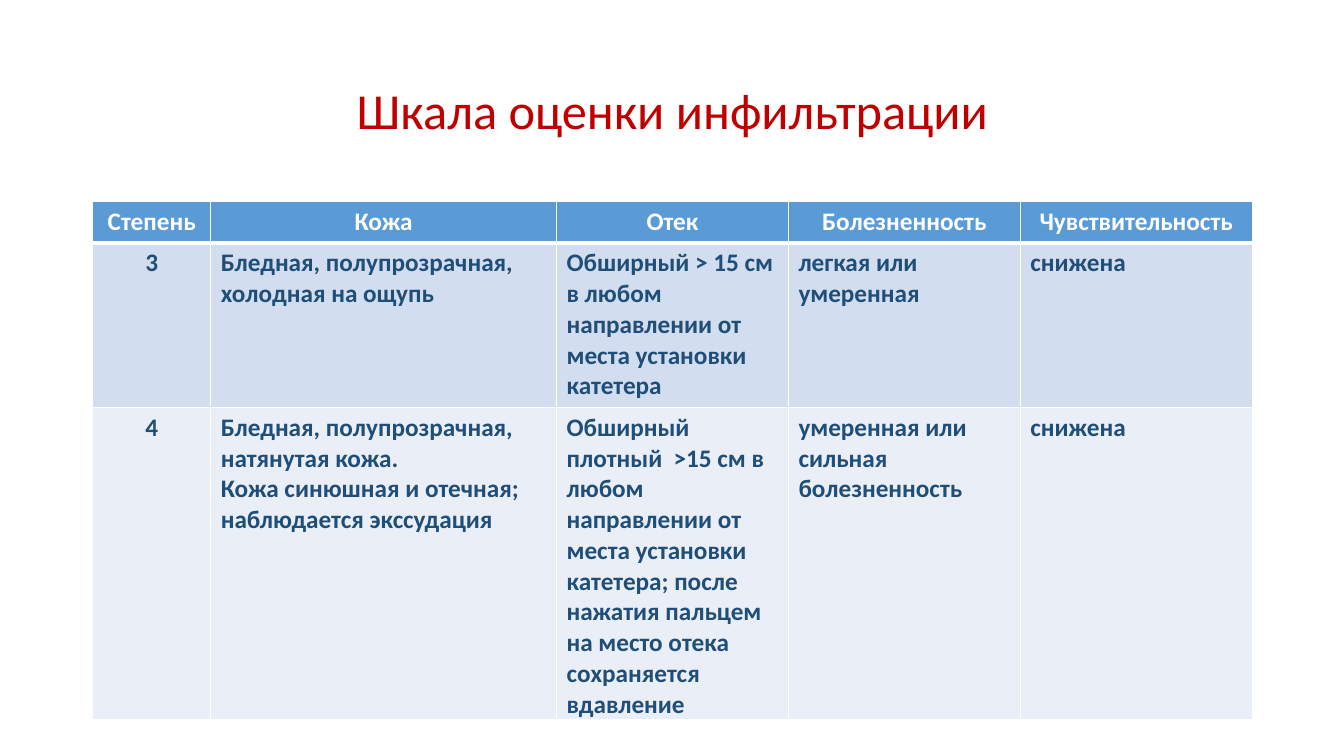
import pptx
import pptx.util
import pptx.dml.color
import pptx.enum.text
import pptx.oxml.ns
import lxml.etree

PX = 9144
COLORS = {"title": "C00000", "head": "5B9BD5", "dark": "D2DEEF",
          "light": "EAEFF7", "text": "1F4E79", "white": "FFFFFF"}
FILLS = ["head", "dark", "light"]
COLS = [117, 343, 230, 230, 230]
ROWS = [41, 163, 307]
CELLS = [
    ["Степень", "Кожа", "Отек", "Болезненность", "Чувствительность"],
    ["3",
     "Бледная, полупрозрачная, холодная на ощупь",
     "Обширный > 15 см в любом направлении от места установки катетера",
     "легкая или умеренная",
     "снижена"],
    ["4",
     "Бледная, полупрозрачная, натянутая кожа.\n"
     "Кожа синюшная и отечная; наблюдается экссудация",
     "Обширный плотный  >15 см в любом направлении от места установки\n"
     "катетера; после нажатия пальцем на место отека сохраняется вдавление",
     "умеренная или сильная болезненность",
     "снижена"],
]
ALIGN = pptx.enum.text.PP_ALIGN
ANCHOR = pptx.enum.text.MSO_ANCHOR


def px(size):
    return pptx.util.Emu(size * PX)


def color(name):
    return pptx.dml.color.RGBColor.from_string(COLORS[name])


def apply(item, values):
    for name, value in values.items():
        setattr(item, name, value)


def write(frame, text, size, bold, tint, para):
    frame.text = text
    for line in frame.paragraphs:
        apply(line, para)
        for run in line.runs:
            apply(run.font, {"name": "Calibri", "size": pptx.util.Pt(size), "bold": bold})
            run.font.color.rgb = color(tint)


def border(cell, side, width):
    props = cell._tc.get_or_add_tcPr()
    qn = pptx.oxml.ns.qn
    line = lxml.etree.SubElement(props, qn("a:ln" + side), w=str(pptx.util.Pt(width)))
    fill = lxml.etree.SubElement(line, qn("a:solidFill"))
    lxml.etree.SubElement(fill, qn("a:srgbClr"), val=COLORS["white"])


def title(slide, text):
    box = slide.shapes.add_textbox(px(92), px(40), px(1150), px(145))
    apply(box.text_frame, {"word_wrap": True, "vertical_anchor": ANCHOR.MIDDLE})
    write(box.text_frame, text, 36, False, "title",
          {"alignment": ALIGN.CENTER, "line_spacing": 0.9})


def style(cell, text, row, col):
    head = row == 0
    align = ALIGN.CENTER if head or col == 0 else ALIGN.LEFT
    write(cell.text_frame, text, 18, True, "white" if head else "text",
          {"alignment": align})
    widths = {"L": 1, "R": 1, "T": 3 if row == 1 else 1, "B": 3 if head else 1}
    for side, width in widths.items():
        border(cell, side, width)
    cell.fill.solid()
    cell.fill.fore_color.rgb = color(FILLS[row])


def grid(slide):
    frame = slide.shapes.add_table(len(ROWS), len(COLS), px(92), px(200),
                                   px(sum(COLS)), px(sum(ROWS)))
    table = frame.table
    for column, width in zip(table.columns, COLS):
        column.width = px(width)
    for line, height in zip(table.rows, ROWS):
        line.height = px(height)
    for row, texts in enumerate(CELLS):
        for col, text in enumerate(texts):
            style(table.cell(row, col), text, row, col)


def main():
    deck = pptx.Presentation()
    apply(deck, {"slide_width": px(1333), "slide_height": px(750)})
    slide = deck.slides.add_slide(deck.slide_layouts[6])
    title(slide, "Шкала оценки инфильтрации")
    grid(slide)
    deck.save("out.pptx")


if __name__ == "__main__":
    main()
